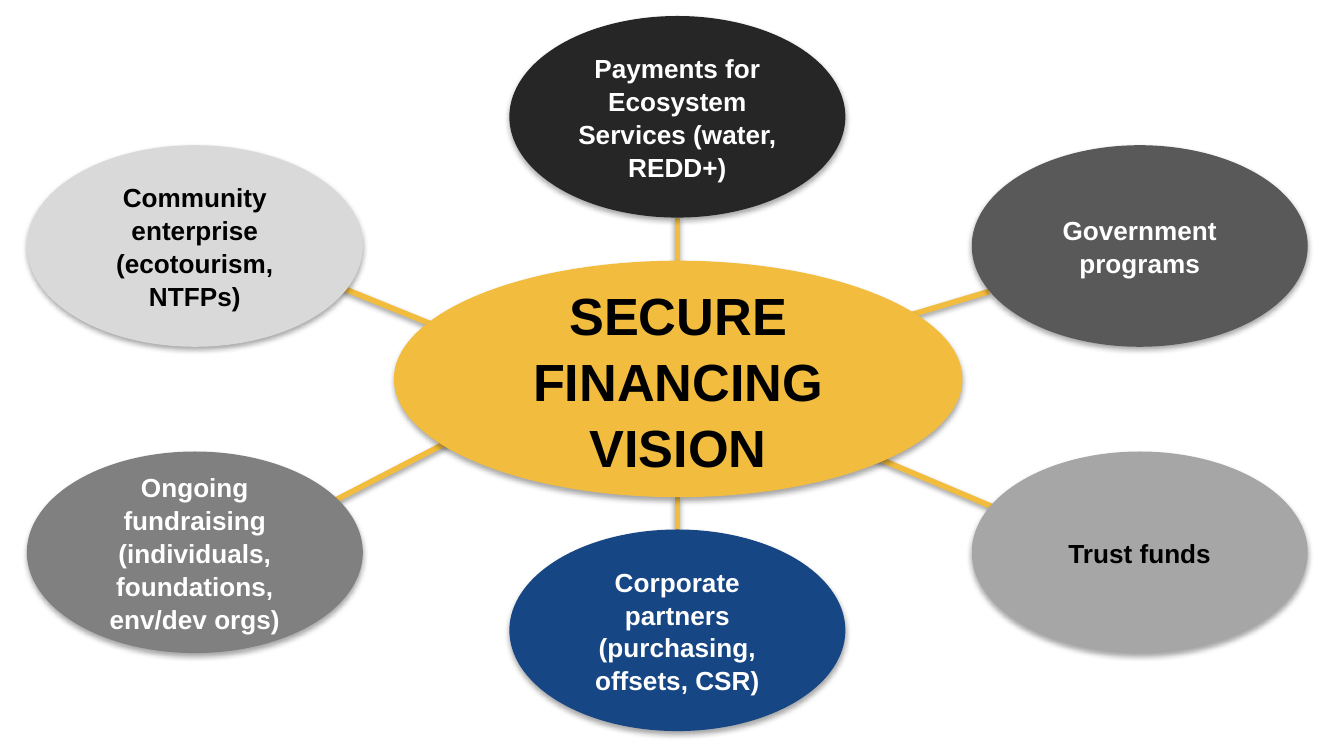
from pptx import Presentation
from pptx.dml.color import RGBColor
from pptx.enum.shapes import MSO_CONNECTOR as CONN, MSO_SHAPE as SHAPE
from pptx.enum.text import MSO_ANCHOR as ANCHOR, PP_ALIGN as ALIGN
from pptx.oxml import parse_xml
from pptx.oxml.ns import nsdecls
from pptx.util import Pt

BLACK, WHITE, GOLD = "000000", "FFFFFF", "F2BD3E"
NODE_W, NODE_H = 180, 108
LEFT, CENTER, RIGHT = 14.4, 272.9, 520.6
TOP, UPPER, LOWER, BOTTOM = 8.6, 77.8, 241.9, 283.7
HUB = (211, 139.7, 304.6, 126.7)

# Each node: left, top, fill, text colour, text, link start at hub, link end at node
NODES = [
    (LEFT, UPPER, "D9D9D9", BLACK, "Community enterprise (ecotourism, NTFPs)",
     (236.2, 175.7), (182.9, 154.1)),
    (RIGHT, UPPER, "595959", WHITE, "Government programs",
     (478.8, 171.4), (529.9, 156.2)),
    (CENTER, TOP, "262626", WHITE, "Payments for Ecosystem Services (water, REDD+)",
     (362.9, 139.7), (362.9, 116.6)),
    (CENTER, BOTTOM, "174685", WHITE, "Corporate partners (purchasing, offsets, CSR)",
     (362.9, 266.4), (362.9, 283.7)),
    (LEFT, LOWER, "808080", WHITE,
     "Ongoing fundraising (individuals, foundations, env/dev orgs)",
     (239.8, 236.9), (175.7, 270)),
    (RIGHT, LOWER, "A6A6A6", BLACK, "Trust funds",
     (460.1, 241.2), (535, 272.9)),
]


def rgb(value):
    """Return the colour for a hex string."""
    return RGBColor.from_string(value)


def add_shadow(s, dist, alpha):
    """Give a shape or connector a soft shadow straight below it."""
    s._element.spPr.append(parse_xml(
        f'<a:effectLst {nsdecls("a")}><a:outerShdw blurRad="{Pt(3.1)}" '
        f'dist="{Pt(dist)}" dir="5400000" rotWithShape="0"><a:srgbClr val="{BLACK}">'
        f'<a:alpha val="{alpha * 1000}"/></a:srgbClr></a:outerShdw></a:effectLst>'))


def add_link(slide, x, y, start, end):
    """Draw a gold line between two points of the box at x, y."""
    s = slide.shapes.add_connector(
        CONN.STRAIGHT, Pt(x + start[0]), Pt(y + start[1]), Pt(x + end[0]), Pt(y + end[1]))
    s.line.color.rgb = rgb(GOLD)
    s.line.width = Pt(3)
    add_shadow(s, 1.6, 38)


def add_ellipse(slide, x, y, w, h, fill, color, text, size):
    """Draw a filled ellipse with centred bold text."""
    s = slide.shapes.add_shape(SHAPE.OVAL, Pt(x), Pt(y), Pt(w), Pt(h))
    s.fill.solid()
    s.fill.fore_color.rgb = rgb(fill)
    s.line.fill.background()
    add_shadow(s, 1.8, 35)
    tf = s.text_frame
    tf.text = text
    tf.word_wrap = True
    tf.vertical_anchor = ANCHOR.MIDDLE
    p = tf.paragraphs[0]
    p.alignment = ALIGN.CENTER
    p.line_spacing = 1.05
    font = p.runs[0].font
    font.name, font.size, font.bold = "Arial", Pt(size), True
    font.color.rgb = rgb(color)


def add_hub_diagram(slide, x, y):
    """Draw the hub, its nodes and the links between them."""
    for *_, start, end in NODES:
        add_link(slide, x, y, start, end)
    for left, top, fill, color, text, *_ in NODES:
        add_ellipse(slide, x + left, y + top, NODE_W, NODE_H, fill, color, text, 14)
    left, top, w, h = HUB
    add_ellipse(slide, x + left, y + top, w, h, GOLD, BLACK, "SECURE FINANCING VISION", 28)


def main():
    """Build and save the slide."""
    prs = Presentation()
    prs.slide_width, prs.slide_height = Pt(720), Pt(405)
    slide = prs.slides.add_slide(prs.slide_layouts[6])
    add_hub_diagram(slide, 0, 0)
    prs.save("out.pptx")


if __name__ == "__main__":
    main()
